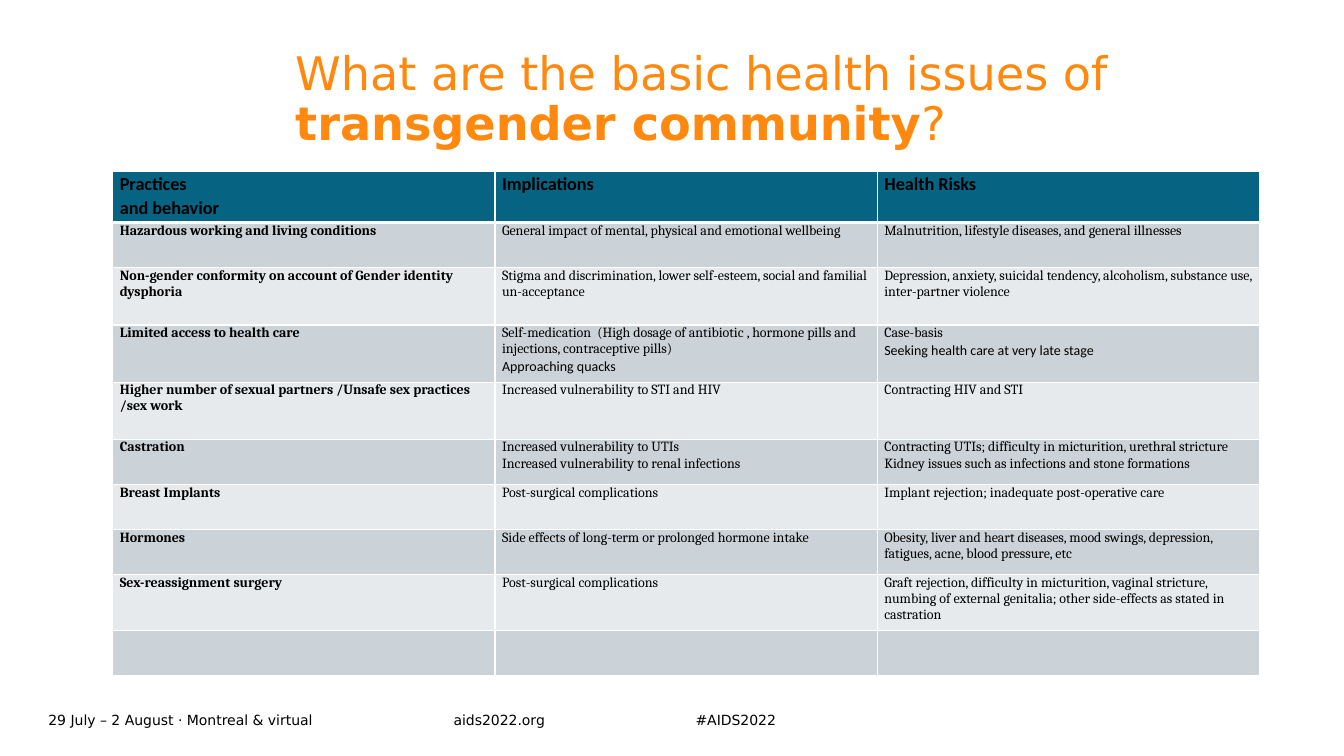
from lxml import etree
from pptx import Presentation
from pptx.dml.color import RGBColor
from pptx.enum import text
from pptx.oxml import ns
from pptx.util import Cm, Pt

ORANGE = RGBColor(0xFF, 0x89, 0x0E)
TEAL = RGBColor(0x07, 0x63, 0x82)
GREY = RGBColor(0xCC, 0xD3, 0xD8)
PALE = RGBColor(0xE7, 0xEA, 0xED)
BLACK = RGBColor(0, 0, 0)
WHITE = RGBColor(0xFF, 0xFF, 0xFF)

SANS, HEADING, BODY = "DejaVu Sans", "Calibri", "Cambria"
LOOSE = 1.07  # line spacing of the Calibri paragraphs

HEADER = [["Practices", "and behavior"], ["Implications"], ["Health Risks"]]
# Row height in cm, then the paragraphs of each cell
ROWS = [
    (1.14, ["Hazardous working and living conditions"],
     ["General impact of mental, physical and emotional wellbeing"],
     ["Malnutrition, lifestyle diseases, and general illnesses"]),
    (1.44, ["Non-gender conformity on account of Gender identity dysphoria"],
     ["Stigma and discrimination, lower self-esteem, social and familial un-acceptance"],
     ["Depression, anxiety, suicidal tendency, alcoholism, substance use, "
      "inter-partner violence"]),
    (1.44, ["Limited access to health care"],
     ["Self-medication  (High dosage of antibiotic , hormone pills and injections, "
      "contraceptive pills)", "Approaching quacks"],
     ["Case-basis", "Seeking health care at very late stage"]),
    (1.44, ["Higher number of sexual partners /Unsafe sex practices /sex work"],
     ["Increased vulnerability to STI and HIV"],
     ["Contracting HIV and STI"]),
    (1.14, ["Castration"],
     ["Increased vulnerability to UTIs", "Increased vulnerability to renal infections"],
     ["Contracting UTIs; difficulty in micturition, urethral stricture",
      "Kidney issues such as infections and stone formations"]),
    (1.14, ["Breast Implants"],
     ["Post-surgical complications"],
     ["Implant rejection; inadequate post-operative care"]),
    (1.14, ["Hormones"],
     ["Side effects of long-term or prolonged hormone intake"],
     ["Obesity, liver and heart diseases, mood swings, depression, fatigues, acne, "
      "blood pressure, etc"]),
    (1.4, ["Sex-reassignment surgery"],
     ["Post-surgical complications"],
     ["Graft rejection, difficulty in micturition, vaginal stricture, numbing of "
      "external genitalia; other side-effects as stated in castration"]),
    (1.14, [], [], []),
]
CALIBRI_LINES = {"Approaching quacks", "Seeking health care at very late stage"}
FOOTER = [(0, 10.2, "29 July – 2 August · Montreal & virtual"),
          (10.21, 4.9, "aids2022.org"),
          (16.31, 4.9, "#AIDS2022")]


def style(para, name, size, color, bold=False, spacing=None):
    font = para.font
    font.name, font.size, font.bold = name, Pt(size), bold
    font.color.rgb = color
    if spacing:
        para.line_spacing = spacing


def add_text_box(page, left, top, width, height, anchor):
    frame = page.shapes.add_textbox(Cm(left), Cm(top), Cm(width), Cm(height)).text_frame
    frame.margin_left = frame.margin_right = frame.margin_top = frame.margin_bottom = 0
    frame.word_wrap = True
    frame.vertical_anchor = anchor
    return frame.paragraphs[0]


def add_title(page, left, top, width, height):
    para = add_text_box(page, left, top, width, height, text.MSO_ANCHOR.BOTTOM)
    style(para, SANS, 33, ORANGE, spacing=0.9)
    for words, bold in (("What are the basic health issues of ", False),
                        ("transgender community", True), ("?", False)):
        span = para.add_run()
        span.text = words
        span.font.bold = bold


def add_footer(page, left, top, height):
    for offset, width, words in FOOTER:
        para = add_text_box(page, left + offset, top, width, height, text.MSO_ANCHOR.MIDDLE)
        para.text = words
        style(para, SANS, 10, BLACK)


def set_borders(cell, thick_side=None):
    properties = cell._tc.get_or_add_tcPr()
    for side in "LRTB":
        width = Pt(3) if side == thick_side else Pt(1)
        line = etree.SubElement(properties, ns.qn(f"a:ln{side}"), w=str(width))
        fill = etree.SubElement(line, ns.qn("a:solidFill"))
        etree.SubElement(fill, ns.qn("a:srgbClr"), val=str(WHITE))


def fill_cell(cell, lines, color, heading=False, bold=False):
    set_borders(cell, "B" if heading else None)
    cell.fill.solid()
    cell.fill.fore_color.rgb = color
    cell.margin_left = cell.margin_right = Cm(0.18)
    cell.margin_top = cell.margin_bottom = 0
    frame = cell.text_frame
    for index, words in enumerate(lines):
        para = frame.add_paragraph() if index else frame.paragraphs[0]
        para.text = words
        if heading:
            style(para, HEADING, 13, BLACK, True, LOOSE)
        elif words in CALIBRI_LINES:
            style(para, HEADING, 10, BLACK, bold, LOOSE)
        else:
            style(para, BODY, 10, BLACK, bold)


def add_health_table(page, left, top, width, header_height):
    heights = [header_height] + [row[0] for row in ROWS]
    table = page.shapes.add_table(len(heights), len(HEADER), Cm(left), Cm(top),
                                  Cm(width), Cm(sum(heights))).table
    for row, height in zip(table.rows, heights):
        row.height = Cm(height)
    # Header row
    for column, lines in enumerate(HEADER):
        fill_cell(table.cell(0, column), lines, TEAL, heading=True)
    # Banded body, first column bold
    for number, (_, *cells) in enumerate(ROWS, 1):
        for column, lines in enumerate(cells):
            fill_cell(table.cell(number, column), lines,
                      GREY if number % 2 else PALE, bold=column == 0)


def main():
    deck = Presentation()
    deck.slide_width, deck.slide_height = Cm(33.87), Cm(19.05)
    page = deck.slides.add_slide(deck.slide_layouts[6])
    add_footer(page, 1.22, 17.83, 0.61)
    add_title(page, 7.44, 1.22, 25.2, 2.57)
    add_health_table(page, 2.84, 4.33, 28.9, 1.28)
    deck.save("out.pptx")


if __name__ == "__main__":
    main()
